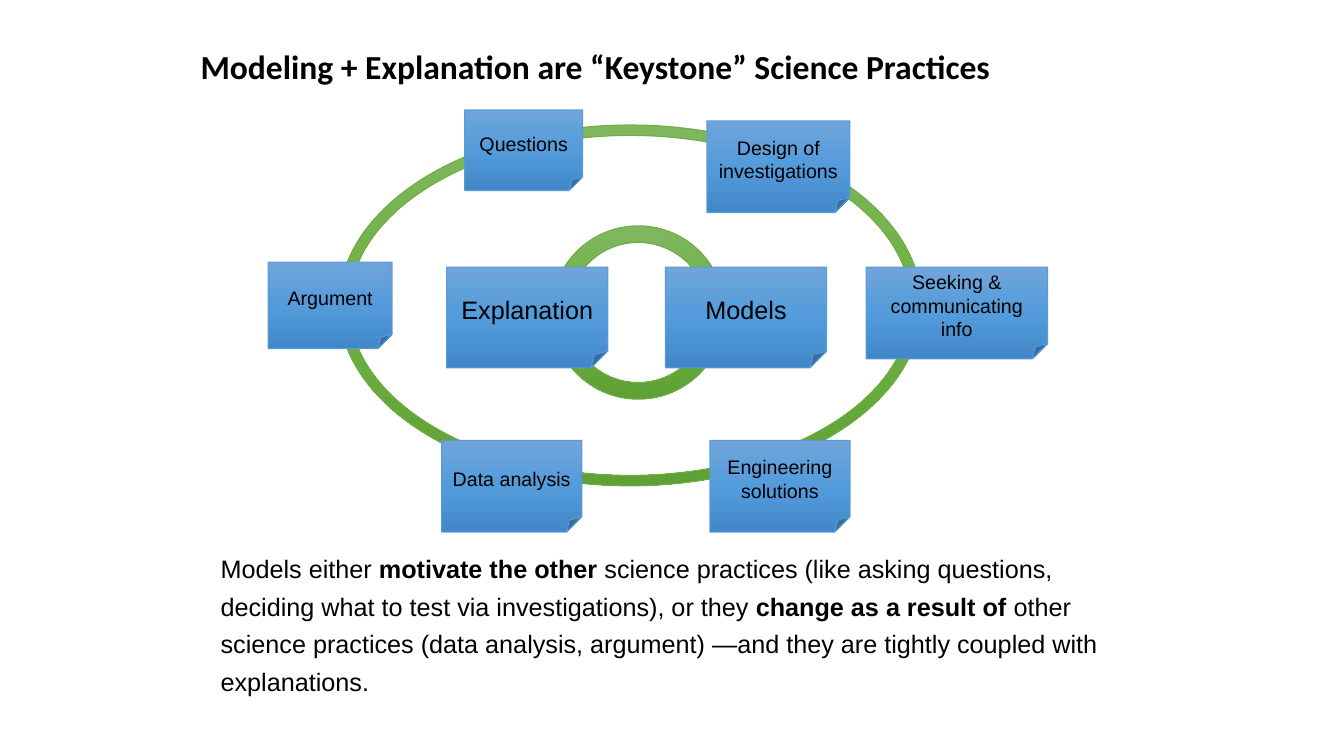
from copy import deepcopy

from pptx import Presentation
from pptx.dml.color import RGBColor
from pptx.enum.shapes import MSO_SHAPE as SHAPE
from pptx.enum.text import MSO_ANCHOR as ANCHOR, PP_ALIGN as ALIGN
from pptx.oxml.ns import qn
from pptx.util import Inches, Pt


def rgb(color):
    return RGBColor.from_string(color)


class Deck:
    FONT, HEADING_FONT, TEXT = "Arial", "Calibri", "000000"
    GREEN = ("7FB75F", "6EB141", "5FA134"), "70AD47"
    BLUE = ("70A5DA", "539BDB", "4288C8"), "5B9BD5"

    def __init__(self):
        self.prs = Presentation()
        self.prs.slide_width, self.prs.slide_height = Inches(13.33), Inches(7.5)
        self.s = self.prs.slides.add_slide(self.prs.slide_layouts[6])

    def style_run(self, r, size, bold=False, font=FONT):
        r.font.name, r.font.size, r.font.bold = font, Pt(size), bold
        r.font.color.rgb = rgb(self.TEXT)

    def shape(self, kind, box, palette):
        stops, line = palette
        sp = self.s.shapes.add_shape(kind, *map(Inches, box))
        sp.shadow.inherit = False
        sp.line.color.rgb = rgb(line)
        sp.line.width = Pt(0.75)
        # Vertical gradient with a third stop
        sp.fill.gradient()
        sp.fill.gradient_angle = 270
        stop_list = sp._element.spPr.find(qn("a:gradFill")).find(qn("a:gsLst"))
        stop_list.append(deepcopy(stop_list[0]))
        for stop, color, pos in zip(sp.fill.gradient_stops, stops, (0, 0.5, 1)):
            stop.color.rgb = rgb(color)
            stop.position = pos
        return sp

    def ring(self, box, thickness):
        sp = self.shape(SHAPE.DONUT, box, self.GREEN)
        sp.adjustments[0] = thickness

    def note(self, text, box, size=14):
        tf = self.shape(SHAPE.FOLDED_CORNER, box, self.BLUE).text_frame
        tf.word_wrap = True
        tf.vertical_anchor = ANCHOR.MIDDLE
        tf.text = text
        p = tf.paragraphs[0]
        p.alignment = ALIGN.CENTER
        self.style_run(p.runs[0], size)

    def text(self, parts, box, size, spacing, anchor=ANCHOR.TOP, font=FONT):
        tf = self.s.shapes.add_textbox(*map(Inches, box)).text_frame
        tf.word_wrap = True
        tf.vertical_anchor = anchor
        p = tf.paragraphs[0]
        p.line_spacing = spacing
        for text, bold in parts:
            r = p.add_run()
            r.text = text
            self.style_run(r, size, bold, font)


def main():
    deck = Deck()

    # Title
    deck.text([("Modeling + Explanation are “Keystone” Science Practices", True)],
              (1.89, 0.12, 8.72, 1.12), 24, 0.9, ANCHOR.MIDDLE, deck.HEADING_FONT)

    # Outer ring of practices
    deck.ring((3.36, 1.24, 5.78, 3.58), 0.029)
    for label, box in (
        ("Questions", (4.61, 1.09, 1.17, 0.8)),
        ("Design of investigations", (7.01, 1.2, 1.42, 0.91)),
        ("Seeking & communicating info", (8.59, 2.65, 1.8, 0.91)),
        ("Engineering solutions", (7.04, 4.37, 1.39, 0.91)),
        ("Data analysis", (4.38, 4.37, 1.39, 0.91)),
        ("Argument", (2.66, 2.6, 1.23, 0.86)),
    ):
        deck.note(label, box)

    # Inner ring of keystone practices
    deck.ring((5.47, 2.24, 1.72, 1.72), 0.096)
    for label, left in (("Models", 6.6), ("Explanation", 4.43)):
        deck.note(label, (left, 2.65, 1.6, 1), 18)

    # Summary
    deck.text([
        ("Models either ", False),
        ("motivate the other ", True),
        ("science practices (like asking questions, deciding what to test via "
         "investigations), or they ", False),
        ("change as a result of ", True),
        ("other science practices (data analysis, argument) —and they are "
         "tightly coupled with explanations.", False),
    ], (2.09, 5.37, 9, 1.49), 18, 1.24)

    deck.prs.save("out.pptx")


if __name__ == "__main__":
    main()
